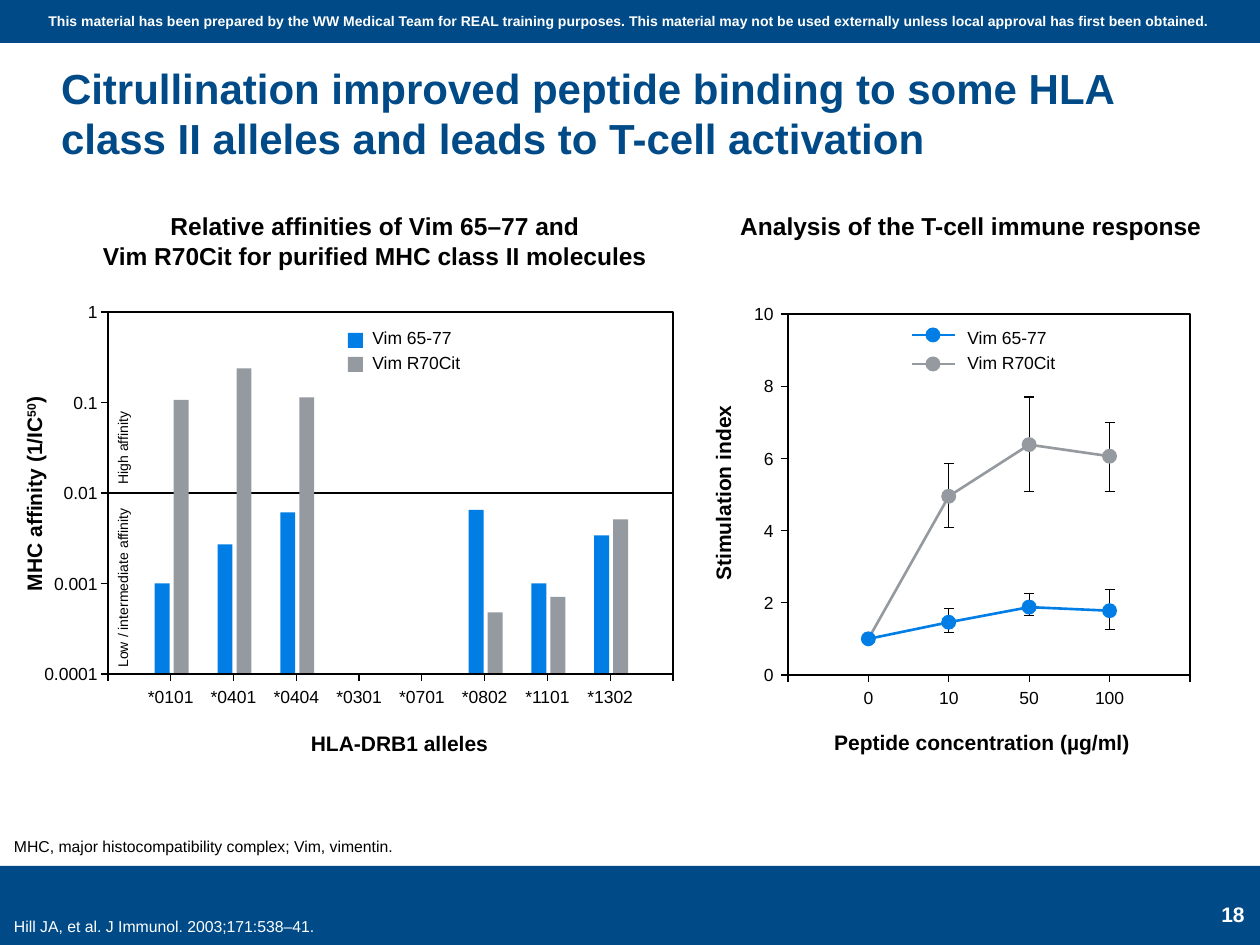
from math import log10

from lxml.etree import SubElement
from pptx import Presentation
from pptx.dml.color import RGBColor
from pptx.enum.shapes import MSO_CONNECTOR, MSO_SHAPE as Shape
from pptx.enum.text import MSO_ANCHOR as Anchor, PP_ALIGN as Align
from pptx.oxml.ns import qn
from pptx.util import Emu, Pt

PX = 914400 / 126
NAVY = RGBColor(0x00, 0x4B, 0x87)
BLUE = RGBColor(0x00, 0x7E, 0xE6)
GREY = RGBColor(0x94, 0x9A, 0x9F)
BLACK = RGBColor(0, 0, 0)
WHITE = RGBColor(255, 255, 255)

NATIVE, CITRULLINATED = "Vim 65-77", "Vim R70Cit"
LABEL_HEIGHT = 34
MARK = 15

# allele: (affinity of Vim 65-77, affinity of Vim R70Cit)
AFFINITIES = {
    "*0101": (0.001, 0.107),
    "*0401": (0.0027, 0.239),
    "*0404": (0.0061, 0.114),
    "*0301": None,
    "*0701": None,
    "*0802": (0.0065, 0.00048),
    "*1101": (0.001, 0.00071),
    "*1302": (0.0034, 0.0051),
}
AFFINITY_TICKS = ["1", "0.1", "0.01", "0.001", "0.0001"]

CONCENTRATIONS = ["0", "10", "50", "100"]
# (stimulation index, low, high) at each concentration
NATIVE_RESPONSE = [(1.0, None, None), (1.46, 1.18, 1.85), (1.88, 1.64, 2.26), (1.78, 1.25, 2.37)]
CIT_RESPONSE = [(1.0, None, None), (4.95, 4.08, 5.85), (6.38, 5.09, 7.7), (6.06, 5.09, 7.0)]


def px(length):
    return Emu(round(length * PX))


def add_text(slide, box, text, size, color=BLACK, bold=False, align=Align.LEFT,
             anchor=Anchor.TOP, margins=None, rotation=0):
    """Add a text box; margins are left, top, right, bottom in px."""
    textbox = slide.shapes.add_textbox(*map(px, box))
    textbox.rotation = rotation
    frame = textbox.text_frame
    frame.word_wrap = True
    frame.vertical_anchor = anchor
    if margins:
        (frame.margin_left, frame.margin_top,
         frame.margin_right, frame.margin_bottom) = map(px, margins)
    paragraph = frame.paragraphs[0]
    paragraph.text = text
    paragraph.alignment = align
    font = paragraph.font
    font.name, font.size, font.bold = "Arial", Pt(size), bold
    font.color.rgb = color
    return paragraph


def add_vertical_text(slide, center, length, text, size, bold=False):
    x, y = center
    return add_text(slide, (x - length / 2, y - 19 if bold else y - 15, length, 38 if bold else 30),
                    text, size, bold=bold, align=Align.CENTER, rotation=270)


def add_fill(slide, box, color, kind=Shape.RECTANGLE):
    shape = slide.shapes.add_shape(kind, *map(px, box))
    shape.shadow.inherit = False
    shape.fill.solid()
    shape.fill.fore_color.rgb = color
    shape.line.fill.background()


def add_frame(slide, box):
    frame = slide.shapes.add_shape(Shape.RECTANGLE, *map(px, box))
    frame.shadow.inherit = False
    frame.fill.background()
    frame.line.color.rgb = BLACK
    frame.line.width = Pt(0.75)


def add_line(slide, start, end, color=BLACK, width=0.75):
    line = slide.shapes.add_connector(MSO_CONNECTOR.STRAIGHT, *map(px, (*start, *end)))
    line.line.color.rgb = color
    line.line.width = Pt(width)
    SubElement(line._element.spPr, qn("a:effectLst"))


def add_dot(slide, x, y, color):
    add_fill(slide, (x - MARK / 2, y - MARK / 2, MARK, MARK), color, Shape.OVAL)


def add_axes(slide, box, y_labels, x_labels, label_right):
    """Add ticks and labels; y labels run from top to bottom."""
    left, top, width, height = box
    bottom = top + height
    for i, label in enumerate(y_labels):
        y = top + height * i / (len(y_labels) - 1)
        add_line(slide, (left - 7, y), (left, y))
        add_text(slide, (label_right - 86, y - LABEL_HEIGHT / 2, 86, LABEL_HEIGHT),
                 label, 10, align=Align.RIGHT)
    step = width / (len(x_labels) + 1)
    for i in range(len(x_labels) + 2):
        x = left + step * i
        add_line(slide, (x, bottom), (x, bottom + 7))
    centers = [left + step * (i + 1) for i in range(len(x_labels))]
    for x, label in zip(centers, x_labels):
        add_text(slide, (x - 38, bottom + 6, 76, LABEL_HEIGHT), label, 10, align=Align.CENTER)
    return centers


def add_legend_labels(slide, left, top):
    for row, label in enumerate((NATIVE, CITRULLINATED)):
        add_text(slide, (left, top + 25 * row, 125, LABEL_HEIGHT), label, 10)


def add_affinity_chart(slide, box):
    left, top, width, height = box
    bottom, middle = top + height, top + height / 2
    decade = height / (len(AFFINITY_TICKS) - 1)
    add_line(slide, (left, middle), (left + width, middle))
    centers = add_axes(slide, box, AFFINITY_TICKS, AFFINITIES, left + 2)
    for x, pair in zip(centers, AFFINITIES.values()):
        for value, color, offset in zip(pair or (), (BLUE, GREY), (-16, 3)):
            bar = decade * (log10(value) + 4)
            add_fill(slide, (x + offset, bottom - bar, MARK, bar), color)
    add_frame(slide, box)
    add_vertical_text(slide, (left + 15, top + 136), 194, "High affinity", 8)
    add_vertical_text(slide, (left + 15, top + 276), 198, "Low / intermediate affinity", 8)
    for y, color in ((21, BLUE), (45, GREY)):
        add_fill(slide, (left + 240, top + y, MARK, MARK), color)
    add_legend_labels(slide, left + 252, top + 9)

    axis_title = add_vertical_text(slide, (left - 74, top + 182), 224, "MHC affinity (1/IC", 12, True)
    superscript = axis_title.add_run()
    superscript.text = "50"
    superscript._r.get_or_add_rPr().set("baseline", "30000")
    axis_title.add_run().text = ")"
    add_text(slide, (left + 188, bottom + 50, 207, 38), "HLA-DRB1 alleles", 12,
             bold=True, align=Align.CENTER)


def add_response_chart(slide, box):
    left, top, width, height = box
    bottom = top + height

    def y_at(index):
        return bottom - height * index / 10

    add_frame(slide, box)
    centers = add_axes(slide, box, [str(n) for n in range(10, -1, -2)], CONCENTRATIONS, left - 2)
    series = ((CIT_RESPONSE, GREY), (NATIVE_RESPONSE, BLUE))
    for response, _ in series:
        for x, (_, low, high) in list(zip(centers, response))[1:]:
            add_line(slide, (x, y_at(low)), (x, y_at(high)))
            for limit in (low, high):
                add_line(slide, (x - 5, y_at(limit)), (x + 5, y_at(limit)))
    for response, color in series:
        points = [(x, y_at(index)) for x, (index, _, _) in zip(centers, response)]
        for start, end in zip(points, points[1:]):
            add_line(slide, start, end, color, 1.5)
        # both series share the first point, which is blue
        for x, y in points if color == BLUE else points[1:]:
            add_dot(slide, x, y, color)

    for y, color in ((21, BLUE), (50, GREY)):
        add_line(slide, (left + 124, top + y), (left + 167, top + y), color, 1.5)
        add_dot(slide, left + 145, top + y, color)
    add_legend_labels(slide, left + 167, top + 7)
    add_vertical_text(slide, (left - 65, top + 179), 207, "Stimulation index", 12, True)
    add_text(slide, (left + 7, bottom + 48, 374, 38), "Peptide concentration (µg/ml)", 12,
             bold=True, align=Align.CENTER)


def add_header(slide):
    add_fill(slide, (0, 0, 1260, 43), NAVY)
    add_text(slide, (0, 6, 1259, 30),
             "This material has been prepared by the WW Medical Team for REAL training purposes. "
             "This material may not be used externally unless local approval has first been obtained.",
             8, WHITE, True, Align.CENTER)
    add_text(slide, (61, 58, 1165, 113),
             "Citrullination improved peptide binding to some HLA class II alleles "
             "and leads to T-cell activation",
             24, NAVY, True, anchor=Anchor.MIDDLE, margins=(0, 6, 0, 10))


def add_footer(slide):
    add_fill(slide, (0, 866, 1260, 79), NAVY)
    for box, text, color in (
        ((14, 796, 1164, 60), "MHC, major histocompatibility complex; Vim, vimentin.", BLACK),
        ((14, 876, 1090, 60), "Hill JA, et al. J Immunol. 2003;171:538–41.", WHITE),
    ):
        add_text(slide, box, text, 9, color, anchor=Anchor.BOTTOM, margins=(0, 0, 0, 0))
    add_text(slide, (1173, 895, 84, 39), "18", 12, WHITE, True, Align.RIGHT)


def main():
    deck = Presentation()
    deck.slide_width, deck.slide_height = px(1260), px(945)
    slide = deck.slides.add_slide(deck.slide_layouts[6])
    add_header(slide)
    for left, height, heading in (
        (60, 72, "Relative affinities of Vim 65–77 and\vVim R70Cit for purified MHC class II molecules"),
        (656, 43, "Analysis of the T-cell immune response"),
    ):
        add_text(slide, (left, 205, 630, height), heading, 14, bold=True, align=Align.CENTER)
    add_affinity_chart(slide, (108, 312, 565, 362))
    add_response_chart(slide, (788, 314, 402, 361))
    add_footer(slide)
    deck.save("out.pptx")


if __name__ == "__main__":
    main()
